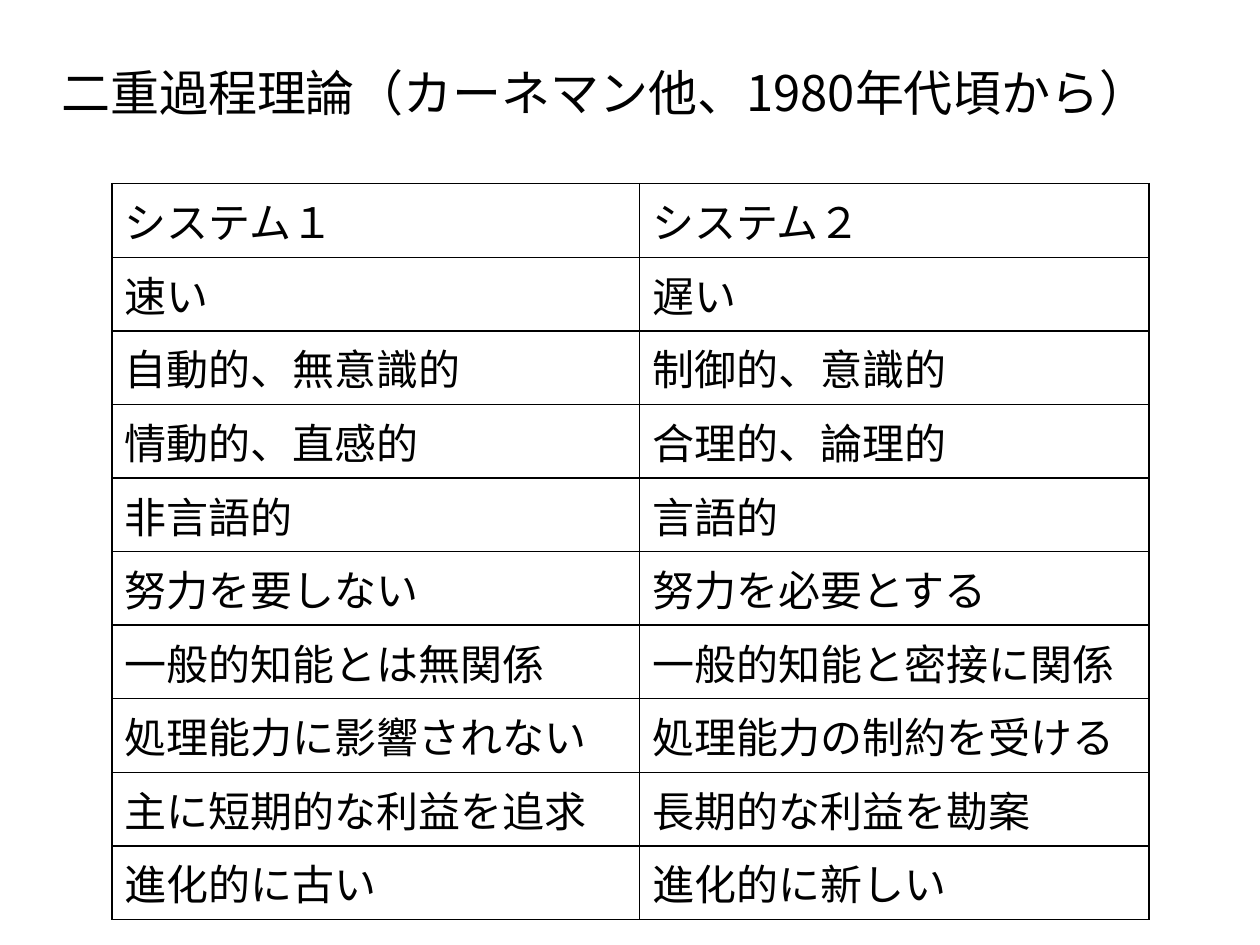
from dataclasses import dataclass

from pptx import Presentation
from pptx.dml.color import RGBColor
from pptx.enum.text import MSO_AUTO_SIZE
from pptx.oxml.ns import qn
from pptx.util import Pt
from lxml import etree

FIT_SHAPE = MSO_AUTO_SIZE.SHAPE_TO_FIT_TEXT


@dataclass(frozen=True)
class Theme:
    """Colours, font and sizes of the slide."""
    ink: str = "000000"
    paper: str = "FFFFFF"
    font: str = "Noto Sans CJK JP"
    title_size: float = 28
    cell_size: float = 24
    rule_width: float = 1


THEME = Theme()
TITLE = "二重過程理論（カーネマン他、1980年代頃から）"
TITLE_BOX = (28, 32, 664, 41)
TABLE_BOX = (64, 105, 592.5, 360)
FIRST_COLUMN_WIDTH = 301.5
SYSTEM_TRAITS = [
    ("システム１", "システム２"),
    ("速い", "遅い"),
    ("自動的、無意識的", "制御的、意識的"),
    ("情動的、直感的", "合理的、論理的"),
    ("非言語的", "言語的"),
    ("努力を要しない", "努力を必要とする"),
    ("一般的知能とは無関係", "一般的知能と密接に関係"),
    ("処理能力に影響されない", "処理能力の制約を受ける"),
    ("主に短期的な利益を追求", "長期的な利益を勘案"),
    ("進化的に古い", "進化的に新しい"),
]


def write_text(frame, text, *, size, color=THEME.ink, font=THEME.font):
    """Write one formatted run into a text frame."""
    run = frame.paragraphs[0].add_run()
    run.text = text
    run.font.size = Pt(size)
    run.font.name = font
    run.font.color.rgb = RGBColor.from_string(color)
    etree.SubElement(run.font._element, qn("a:ea"), typeface=font)


def rule_cell(cell):
    """Draw a solid rule on all four sides of a cell."""
    properties = cell._tc.get_or_add_tcPr()
    for position, side in enumerate(("lnL", "lnR", "lnT", "lnB")):
        rule = etree.Element(qn(f"a:{side}"), w=str(Pt(THEME.rule_width)))
        fill = etree.SubElement(rule, qn("a:solidFill"))
        etree.SubElement(fill, qn("a:srgbClr"), val=THEME.ink)
        properties.insert(position, rule)


def add_title(slide, box):
    """Place the title on a single line in the box."""
    frame = slide.shapes.add_textbox(*map(Pt, box)).text_frame
    frame.word_wrap = False
    frame.auto_size = FIT_SHAPE
    write_text(frame, TITLE, size=THEME.title_size)


def add_comparison(slide, box):
    """Place the table comparing the two systems in the box."""
    table = slide.shapes.add_table(len(SYSTEM_TRAITS), 2, *map(Pt, box)).table
    table.first_row = False
    table.horz_banding = False
    table.columns[0].width = Pt(FIRST_COLUMN_WIDTH)
    table.columns[1].width = Pt(box[2] - FIRST_COLUMN_WIDTH)
    for row, traits in enumerate(SYSTEM_TRAITS):
        for column, trait in enumerate(traits):
            cell = table.cell(row, column)
            cell.fill.solid()
            cell.fill.fore_color.rgb = RGBColor.from_string(THEME.paper)
            rule_cell(cell)
            write_text(cell.text_frame, trait, size=THEME.cell_size)


def main():
    """Build and save the slide."""
    deck = Presentation()
    deck.slide_width, deck.slide_height = Pt(720), Pt(540)
    slide = deck.slides.add_slide(deck.slide_layouts[6])
    add_comparison(slide, TABLE_BOX)
    add_title(slide, TITLE_BOX)
    deck.save("out.pptx")


if __name__ == "__main__":
    main()
